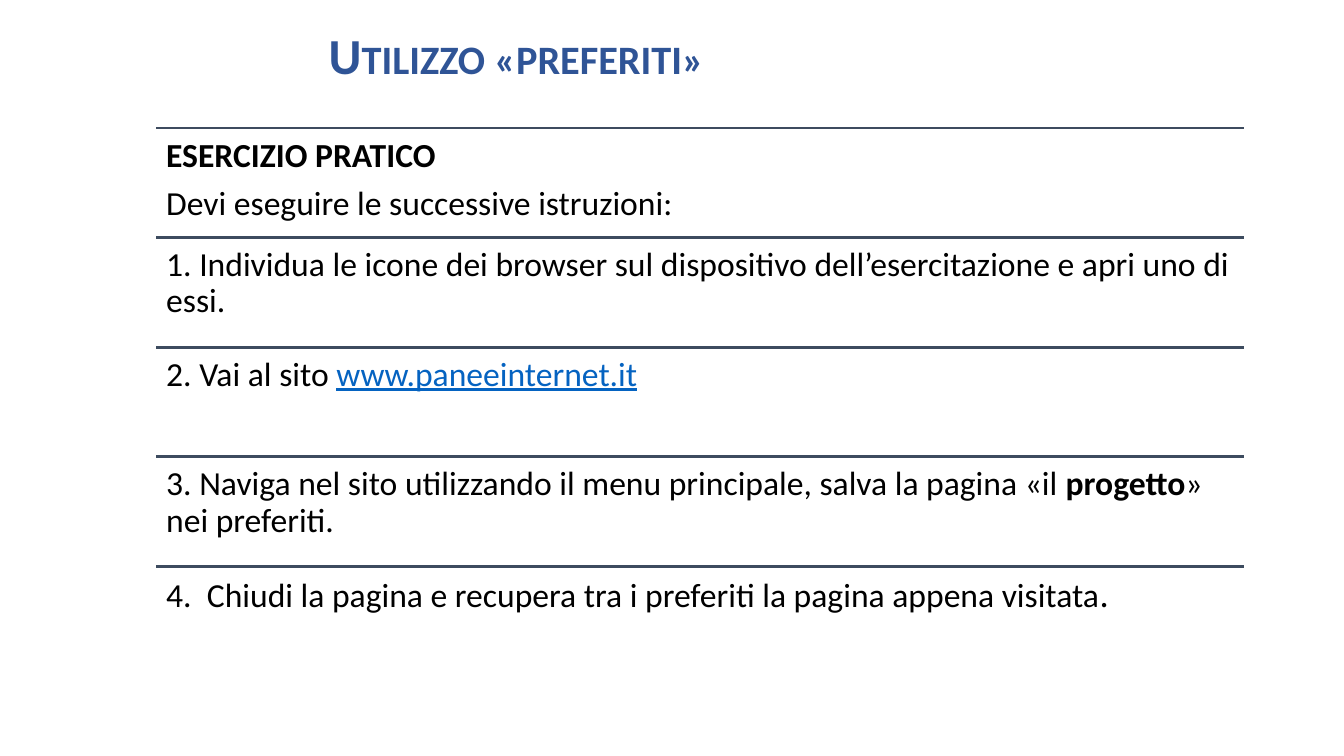
from pptx import Presentation
from pptx.dml.color import RGBColor
from pptx.enum import shapes, text
from pptx.oxml.ns import qn
from pptx.util import Inches, Pt
from lxml import etree

THEME = {
    "face": "Calibri",
    "title": {"size": 36, "color": "2F5496", "bold": True},
    "body": {"size": 24, "color": "000000", "bold": False},
    "link": {"color": "0563C1", "underline": True},
    "rule": "3D4B5F",
}
LEFT, TOP, WIDTH, STEP = 1.55, 1.27, 10.79, 1.0875

# Each row holds paragraphs, each paragraph holds (words, format) runs
ROWS = [
    [[("ESERCIZIO PRATICO", {"bold": True})],
     [("Devi eseguire le successive istruzioni:", {})]],
    [[("1. Individua le icone dei browser sul dispositivo "
       "dell’esercitazione e apri uno di essi.", {})]],
    [[("2. Vai al sito ", {}), ("www.paneeinternet.it", THEME["link"])]],
    [[("3. Naviga nel sito utilizzando il menu principale, "
       "salva la pagina «il ", {}),
      ("progetto", {"bold": True}), ("» nei preferiti.", {})]],
    [[("4.  Chiudi la pagina e recupera tra i preferiti "
       "la pagina appena visitata", {}), (".", {"size": 26})]],
]


def add_run(para, words, style):
    run = para.add_run()
    run.text = words
    font = run.font
    font.name = THEME["face"]
    for key, value in style.items():
        if key == "color":
            font.color.rgb = RGBColor.from_string(value)
        else:
            setattr(font, key, Pt(value) if key == "size" else value)
    return run


def add_box(box, insets, anchor):
    frame = slide.shapes.add_textbox(*map(Inches, box)).text_frame
    frame.word_wrap = True
    frame.vertical_anchor = anchor
    for side, inset in zip(("left", "top", "right", "bottom"), insets):
        setattr(frame, f"margin_{side}", Inches(inset))
    return frame


deck = Presentation()
deck.slide_width, deck.slide_height = Inches(13.33), Inches(7.5)
slide = deck.slides.add_slide(deck.slide_layouts[6])

# Title
frame = add_box((1.53, -0.15, 8.25, 1.45), (1.73, 0.07, 0.13, 0.07),
                text.MSO_ANCHOR.MIDDLE)
para = frame.paragraphs[0]
para.line_spacing = 0.9
run = add_run(para, "Utilizzo «preferiti»", THEME["title"])
run.font._element.set("cap", "small")

# Ruled rows
for i, row in enumerate(ROWS):
    y = TOP + i * STEP
    rule = slide.shapes.add_connector(
        shapes.MSO_CONNECTOR.STRAIGHT,
        Inches(LEFT), Inches(y), Inches(LEFT + WIDTH), Inches(y))
    rule.line.color.rgb = RGBColor.from_string(THEME["rule"])
    rule.line.width = Pt(2)
    etree.SubElement(rule._element.spPr, qn("a:effectLst"))

    frame = add_box((LEFT, y, WIDTH, STEP), [0.1] * 4, text.MSO_ANCHOR.TOP)
    for j, runs in enumerate(row):
        para = frame.add_paragraph() if j else frame.paragraphs[0]
        para.line_spacing = 0.9
        if j:
            para.space_before = Pt(8.4)
        for words, style in runs:
            add_run(para, words, {**THEME["body"], **style})

deck.save("out.pptx")
